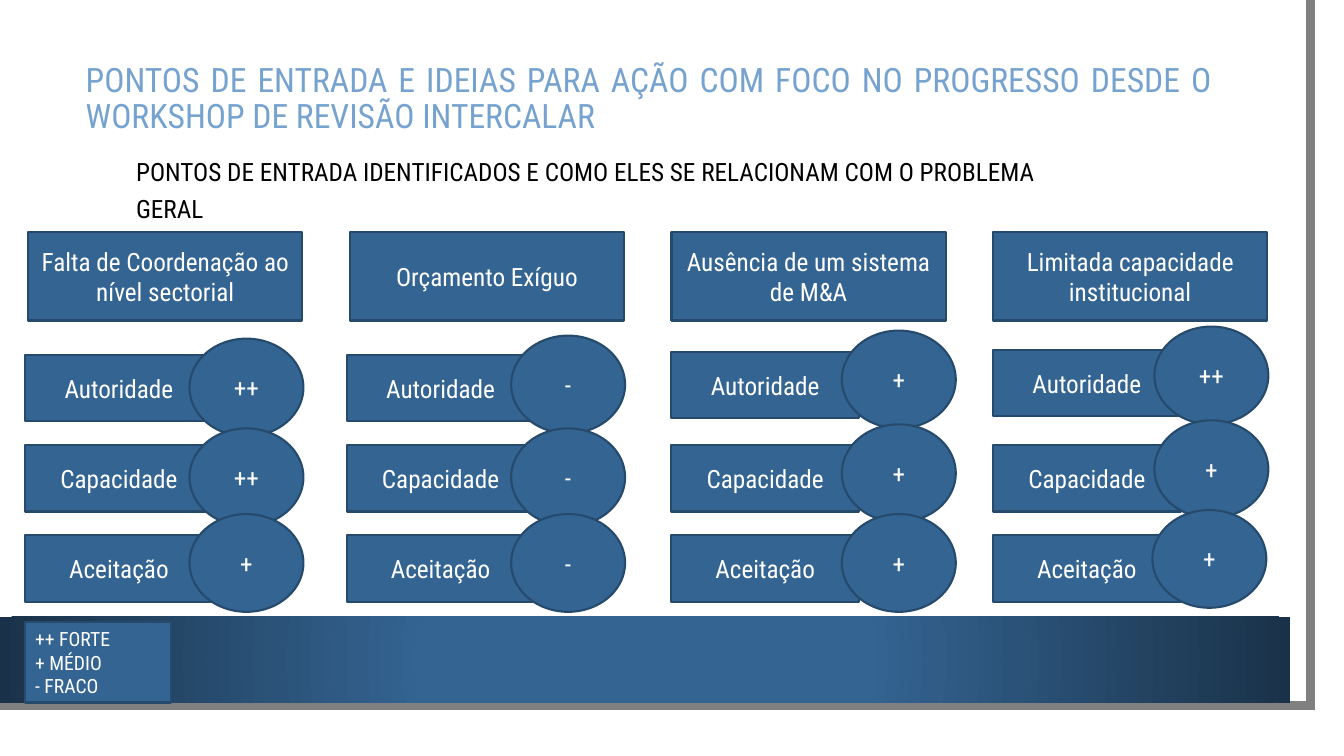
from lxml import etree
from pptx import Presentation, util as u
from pptx.dml.color import RGBColor
from pptx.enum import shapes, text
from pptx.oxml.ns import qn

FONT = "Roboto Condensed"
COLORS = {
    "page": "FFFFFF", "white": "FFFFFF", "black": "000000",
    "title": "75A2CE", "block": "346492", "edge": "264A6C",
    "band_end": "1A3249", "frame": "808080",
}
RECT, OVAL = shapes.MSO_SHAPE.RECTANGLE, shapes.MSO_SHAPE.OVAL

# Grid in inches: four problem columns, three criterion rows
LEFT, COLUMN_STEP = 0.28, 3.19
HEADING_TOP, HEADING_SIZE = 2.3, (2.72, 0.88)
ROW_TOP, ROW_STEP = 3.52, 0.895
LABEL_SIZE, RATING_SIZE = (1.86, 0.66), (1.13, 0.97)
CRITERIA = ["Autoridade", "Capacidade", "Aceitação"]

# Heading, label shift from the column, first label lift,
# then rating, left and top of each circle
PROBLEMS = [
    ("Falta de Coordenação ao nível sectorial", -0.03, 0,
     [("++", 1.88, 3.36), ("++", 1.88, 4.25), ("+", 1.88, 5.1)]),
    ("Orçamento Exíguo", -0.03, 0,
     [("-", 5.07, 3.33), ("-", 5.07, 4.25), ("-", 5.07, 5.1)]),
    ("Ausência de um sistema de M&A", 0, 0.03,
     [("+", 8.35, 3.28), ("+", 8.35, 4.21), ("+", 8.35, 5.1)]),
    ("Limitada capacidade institucional", 0, 0.05,
     [("++", 11.45, 3.24), ("+", 11.45, 4.17), ("+", 11.43, 5.06)]),
]


def rgb(name):
    return RGBColor.from_string(COLORS[name])


def style_paragraph(paragraph, size, color, align):
    paragraph.alignment = align
    paragraph.font.name = FONT
    paragraph.font.size = u.Pt(size)
    paragraph.font.color.rgb = rgb(color)


def add_block(slide, kind, left, top, size, lines=(), points=18,
              align=text.PP_ALIGN.CENTER):
    block = slide.shapes.add_shape(
        kind, *(u.Inches(v) for v in (left, top, *size)))
    block.shadow.inherit = False
    block.fill.solid()
    block.fill.fore_color.rgb = rgb("block")
    block.line.color.rgb = rgb("edge")
    block.line.width = u.Pt(1.5)
    frame = block.text_frame
    frame.word_wrap = True
    frame.vertical_anchor = text.MSO_ANCHOR.MIDDLE
    if lines:
        frame.text = "\n".join(lines)
        for paragraph in frame.paragraphs:
            style_paragraph(paragraph, points, "white", align)
    return block


def fill_placeholder(holder, box, words, size, color, align, spacing):
    holder.left, holder.top, holder.width, holder.height = map(u.Inches, box)
    frame = holder.text_frame
    frame.text = words
    frame.word_wrap = True
    frame.auto_size = text.MSO_AUTO_SIZE.NONE
    frame.vertical_anchor = text.MSO_ANCHOR.MIDDLE
    paragraph = frame.paragraphs[0]
    paragraph.line_spacing = spacing
    paragraph.space_before = u.Pt(0)
    return paragraph, (size, color, align)


def add_backdrop(slide):
    # Gray frame along the right and bottom edges
    builder = slide.shapes.build_freeform(12.82, 0, scale=u.Inches(1))
    builder.add_line_segments([(12.85, 7.02), (-0.03, 7.01)], close=False)
    frame = builder.convert_to_shape()
    frame.shadow.inherit = False
    frame.fill.background()
    frame.line.color.rgb = rgb("frame")
    frame.line.width = u.Pt(6.5)
    etree.SubElement(frame.line._get_or_add_ln(), qn("a:miter"), lim="800000")

    # Bottom band with a gradient that darkens away from its centre
    band = add_block(slide, RECT, 0, 6.12, (12.8, 0.85))
    band.line.fill.background()
    band.fill.gradient()
    for stop, (position, name) in zip(
            band.fill.gradient_stops, [(0.34, "block"), (1, "band_end")]):
        stop.position = position
        stop.color.rgb = rgb(name)
    gradient = band.fill._fill._gradFill
    gradient.remove(gradient.find(qn("a:lin")))
    circle = etree.SubElement(gradient, qn("a:path"), path="circle")
    etree.SubElement(circle, qn("a:fillToRect"),
                     {side: "50000" for side in "ltrb"})


def add_headings(slide):
    title, body = slide.placeholders
    paragraph, style = fill_placeholder(
        title, (0.75, 0.54, 11.37, 0.9),
        "PONTOS DE ENTRADA E IDEIAS PARA AÇÃO COM FOCO NO PROGRESSO "
        "DESDE O WORKSHOP DE REVISÃO INTERCALAR",
        24, "title", text.PP_ALIGN.JUSTIFY, 0.9)
    style_paragraph(paragraph, *style)

    paragraph, style = fill_placeholder(
        body, (0.75, 1.6, 10.1, 0.51),
        "PONTOS DE ENTRADA IDENTIFICADOS E COMO ELES SE RELACIONAM "
        "COM O PROBLEMA GERAL",
        18, "black", text.PP_ALIGN.LEFT, 1.2)
    paragraph.level = 1
    properties = paragraph._p.get_or_add_pPr()
    properties.set("marL", str(u.Inches(0.5)))
    properties.set("indent", "0")
    etree.SubElement(properties, qn("a:buNone"))
    style_paragraph(paragraph, *style)


def add_problem(slide, column, heading, shift, lift, ratings):
    left = LEFT + column * COLUMN_STEP
    add_block(slide, RECT, left, HEADING_TOP, HEADING_SIZE, [heading])
    for row, (criterion, rating) in enumerate(zip(CRITERIA, ratings)):
        mark, mark_left, mark_top = rating
        label_top = ROW_TOP + row * ROW_STEP - (lift if row == 0 else 0)
        add_block(slide, RECT, left + shift, label_top, LABEL_SIZE, [criterion])
        add_block(slide, OVAL, mark_left, mark_top, RATING_SIZE, [mark])


def main():
    deck = Presentation()
    deck.slide_width, deck.slide_height = u.Inches(13.33), u.Inches(7.5)
    slide = deck.slides.add_slide(deck.slide_layouts[1])
    slide.background.fill.solid()
    slide.background.fill.fore_color.rgb = rgb("page")

    add_backdrop(slide)
    add_headings(slide)
    for column, problem in enumerate(PROBLEMS):
        add_problem(slide, column, *problem)

    # Rating legend
    add_block(slide, RECT, 0.25, 6.17, (1.45, 0.8),
              ["++ FORTE", "+ MÉDIO", "- FRACO"], 14, text.PP_ALIGN.LEFT)
    deck.save("out.pptx")


if __name__ == "__main__":
    main()
